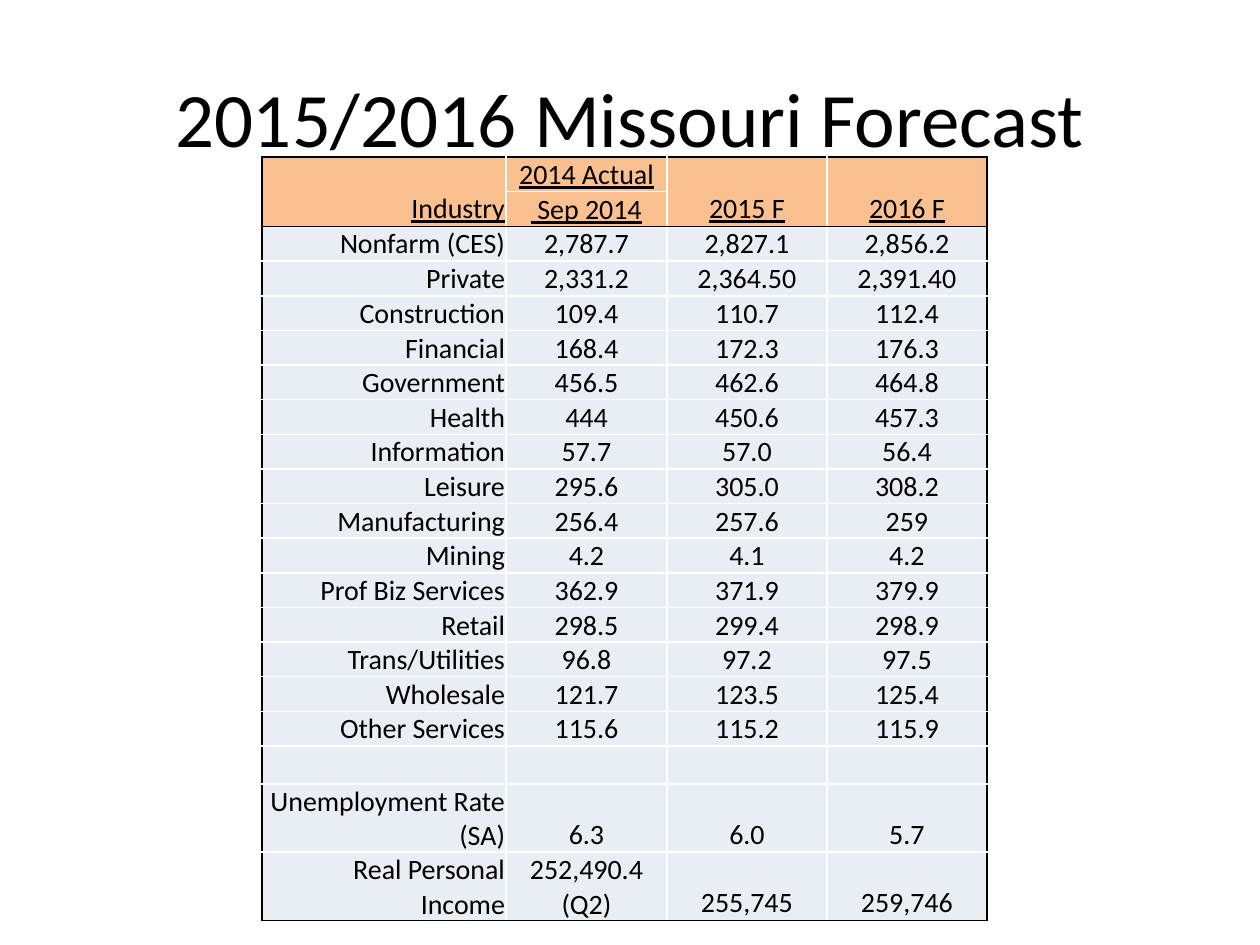
"""Build the Missouri employment forecast slide."""
from typing import NamedTuple

from lxml.etree import SubElement
from pptx import Presentation
from pptx.dml.color import RGBColor
from pptx.enum.text import MSO_ANCHOR as Anchor, PP_ALIGN as Align
from pptx.oxml.ns import qn
from pptx.util import Emu, Pt

BLACK = RGBColor(0x00, 0x00, 0x00)
WHITE = RGBColor(0xFF, 0xFF, 0xFF)
ORANGE = RGBColor(0xFA, 0xC0, 0x90)
PALE_BLUE = RGBColor(0xE9, 0xED, 0xF4)
FONT = "Calibri"
PX_PER_INCH = 126
COL_WIDTHS = [244, 161, 160, 160]
ROW_HEIGHTS = [33, 34, 35] + [34] * 14 + [38, 63, 60]
HEADER_ROWS = 2


class Row(NamedTuple):
    industry: str
    actual: str
    f2015: str
    f2016: str


ROWS = [
    Row("Industry", "2014 Actual", "2015 F", "2016 F"),
    Row("", " Sep 2014", "", ""),
    Row("Nonfarm (CES)", "2,787.7", "2,827.1", "2,856.2"),
    Row("Private", "2,331.2", "2,364.50", "2,391.40"),
    Row("Construction", "109.4", "110.7", "112.4"),
    Row("Financial", "168.4", "172.3", "176.3"),
    Row("Government", "456.5", "462.6", "464.8"),
    Row("Health", "444", "450.6", "457.3"),
    Row("Information", "57.7", "57.0", "56.4"),
    Row("Leisure", "295.6", "305.0", "308.2"),
    Row("Manufacturing", "256.4", "257.6", "259"),
    Row("Mining", "4.2", "4.1", "4.2"),
    Row("Prof Biz Services", "362.9", "371.9", "379.9"),
    Row("Retail", "298.5", "299.4", "298.9"),
    Row("Trans/Utilities", "96.8", "97.2", "97.5"),
    Row("Wholesale", "121.7", "123.5", "125.4"),
    Row("Other Services", "115.6", "115.2", "115.9"),
    Row("", "", "", ""),
    Row("Unemployment Rate (SA)", "6.3", "6.0", "5.7"),
    Row("Real Personal Income", "252,490.4 (Q2)", "255,745", "259,746"),
]


def px(n: int) -> Emu:
    """Turn pixels into EMU."""
    return Emu(round(n * 914400 / PX_PER_INCH))


def style_paragraph(p, size: int, align: Align, underline: bool = False) -> None:
    """Set the font and alignment of a paragraph."""
    p.alignment = align
    p.font.name, p.font.size = FONT, Pt(size)
    p.font.underline = underline
    p.font.color.rgb = BLACK


def set_borders(cell, left: bool, right: bool, top: bool, bottom: bool) -> None:
    """Draw each cell edge black where flagged and white elsewhere."""
    tc_pr = cell._tc.get_or_add_tcPr()
    edges = {"lnL": left, "lnR": right, "lnT": top, "lnB": bottom}
    for i, (tag, dark) in enumerate(edges.items()):
        ln = SubElement(tc_pr, qn(f"a:{tag}"), w=str(Pt(1)))
        fill = SubElement(ln, qn("a:solidFill"))
        SubElement(fill, qn("a:srgbClr"), val=str(BLACK if dark else WHITE))
        tc_pr.insert(i, ln)


def add_title(slide, text: str) -> None:
    """Add the centred title."""
    tf = slide.shapes.add_textbox(px(63), px(38), px(1134), px(158)).text_frame
    tf.word_wrap = True
    tf.vertical_anchor = Anchor.MIDDLE
    p = tf.paragraphs[0]
    p.text = text
    style_paragraph(p, 44, Align.CENTER)


def fill_cell(cell, text: str, row: int, col: int) -> None:
    """Write and style one table cell."""
    header = row < HEADER_ROWS
    cell.margin_left = cell.margin_right = cell.margin_top = px(1)
    cell.margin_bottom = 0
    cell.vertical_anchor = Anchor.BOTTOM
    cell.fill.solid()
    cell.fill.fore_color.rgb = ORANGE if header else PALE_BLUE
    p = cell.text_frame.paragraphs[0]
    p.text = text
    style_paragraph(p, 16, Align.CENTER if col else Align.RIGHT, header)
    set_borders(
        cell,
        left=col == 0,
        right=col == len(COL_WIDTHS) - 1,
        top=row in (0, HEADER_ROWS),
        bottom=cell.is_merge_origin or row in (HEADER_ROWS - 1, len(ROWS) - 1),
    )


def add_forecast_table(slide) -> None:
    """Add the forecast table with its two-row header."""
    frame = slide.shapes.add_table(
        len(ROWS), len(COL_WIDTHS), px(262), px(157),
        px(sum(COL_WIDTHS)), px(sum(ROW_HEIGHTS)),
    )
    table = frame.table
    for column, width in zip(table.columns, COL_WIDTHS):
        column.width = px(width)
    for table_row, height in zip(table.rows, ROW_HEIGHTS):
        table_row.height = px(height)
    for col in (0, 2, 3):
        table.cell(0, col).merge(table.cell(HEADER_ROWS - 1, col))
    for r, row in enumerate(ROWS):
        for c, text in enumerate(row):
            fill_cell(table.cell(r, c), text, r, c)


def main() -> None:
    """Create and save the presentation."""
    prs = Presentation()
    prs.slide_width, prs.slide_height = px(1260), px(945)
    slide = prs.slides.add_slide(prs.slide_layouts[6])
    add_title(slide, "2015/2016 Missouri Forecast")
    add_forecast_table(slide)
    prs.save("out.pptx")


if __name__ == "__main__":
    main()
